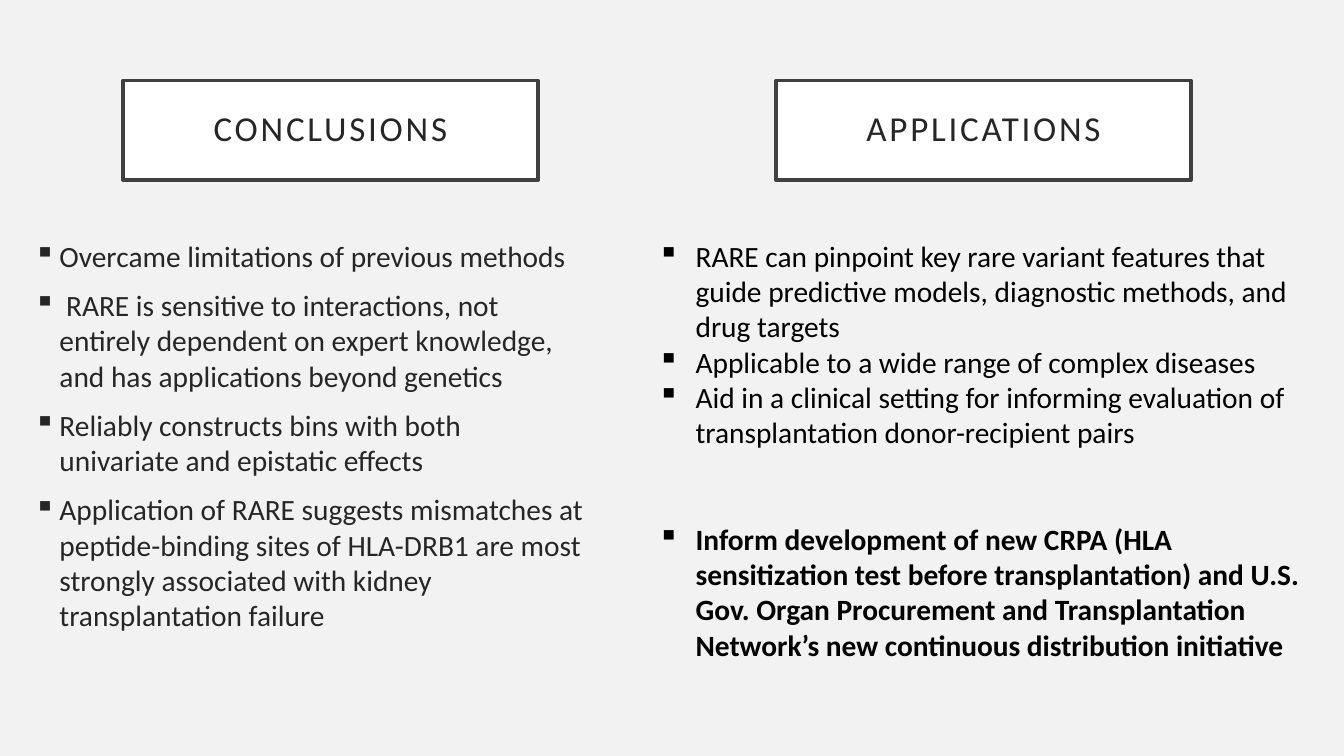
"""Builds a slide setting conclusions beside applications."""
from dataclasses import dataclass

from lxml.etree import SubElement
from pptx import Presentation
from pptx.dml.color import RGBColor as Rgb
from pptx.enum.shapes import MSO_SHAPE as Preset
from pptx.enum.text import MSO_ANCHOR as Anchor, MSO_AUTO_SIZE as AutoSize, PP_ALIGN as Align
from pptx.oxml.ns import qn
from pptx.util import Cm, Pt


@dataclass(frozen=True)
class Theme:
    background: Rgb = Rgb(0xF2, 0xF2, 0xF2)
    panel: Rgb = Rgb(0xFF, 0xFF, 0xFF)
    border: Rgb = Rgb(0x40, 0x40, 0x40)
    soft_text: Rgb = Rgb(0x26, 0x26, 0x26)
    strong_text: Rgb = Rgb(0, 0, 0)
    font: str = "Calibri"
    heading_size: Pt = Pt(25)
    body_size: Pt = Pt(21)
    border_width: Pt = Pt(2.5)
    letter_spacing: int = 200


def apply_format(target, values):
    for name, value in values.items():
        setattr(target, name, value)


class SlideBuilder:
    def __init__(self, presentation, theme):
        self.theme = theme
        self.slide = presentation.slides.add_slide(presentation.slide_layouts[5])
        fill = self.slide.background.fill
        fill.solid()
        fill.fore_color.rgb = theme.background

    def write_run(self, paragraph, text, color, size, bold=False):
        run = paragraph.add_run()
        run.text = text
        apply_format(run.font, {"name": self.theme.font, "size": size, "bold": bold})
        run.font.color.rgb = color
        return run

    def heading(self, shape, text, left):
        theme = self.theme
        apply_format(shape, {"left": left, "top": Cm(2.03), "width": Cm(10.46), "height": Cm(2.51)})
        shape.fill.solid()
        shape.fill.fore_color.rgb = theme.panel
        shape.line.color.rgb = theme.border
        shape.line.width = theme.border_width
        frame = shape.text_frame
        sides = ("left", "top", "right", "bottom")
        apply_format(frame, {f"margin_{side}": Cm(0.51) for side in sides})
        apply_format(frame, {"vertical_anchor": Anchor.MIDDLE, "word_wrap": True,
                             "auto_size": AutoSize.NONE})
        paragraph = frame.paragraphs[0]
        apply_format(paragraph, {"alignment": Align.CENTER, "line_spacing": 0.9})
        run = self.write_run(paragraph, text, theme.soft_text, theme.heading_size)
        run._r.get_or_add_rPr().set("spc", str(theme.letter_spacing))

    def title_heading(self, text, left):
        self.heading(self.slide.shapes.title, text, left)

    def box_heading(self, text, left):
        shape = self.slide.shapes.add_shape(Preset.RECTANGLE, left, 0, Cm(1), Cm(1))
        shape.shadow.inherit = False
        self.heading(shape, text, left)

    def bullets(self, items, left, width, height, indent, color):
        box = self.slide.shapes.add_textbox(left, Cm(5.87), width, height)
        frame = box.text_frame
        frame.word_wrap = True
        for index, (text, space_before, bold) in enumerate(items):
            paragraph = frame.add_paragraph() if index else frame.paragraphs[0]
            paragraph.space_before = Pt(space_before)
            properties = paragraph._p.get_or_add_pPr()
            properties.set("marL", str(indent))
            properties.set("indent", str(-indent))
            SubElement(properties, qn("a:buChar"), char="▪")
            self.write_run(paragraph, text, color, self.theme.body_size, bold)


CONCLUSIONS = [
    "Overcame limitations of previous methods",
    " RARE is sensitive to interactions, not entirely dependent on expert knowledge, "
    "and has applications beyond genetics",
    "Reliably constructs bins with both univariate and epistatic effects",
    "Application of RARE suggests mismatches at peptide-binding sites of HLA-DRB1 "
    "are most strongly associated with kidney transplantation failure",
]
APPLICATIONS = [
    ("RARE can pinpoint key rare variant features that guide predictive models, "
     "diagnostic methods, and drug targets", 0, False),
    ("Applicable to a wide range of complex diseases", 0, False),
    ("Aid in a clinical setting for informing evaluation of transplantation "
     "donor-recipient pairs", 0, False),
    ("Inform development of new CRPA (HLA sensitization test before transplantation) "
     "and U.S. Gov. Organ Procurement and Transplantation Network’s new continuous "
     "distribution initiative", 51, True),
]


def main():
    presentation = Presentation()
    apply_format(presentation, {"slide_width": Cm(33.87), "slide_height": Cm(19.05)})
    theme = Theme()
    builder = SlideBuilder(presentation, theme)
    builder.title_heading("CONCLUSIONS", Cm(3.1))
    builder.bullets([(text, 10, False) for text in CONCLUSIONS],
                    Cm(0.61), Cm(14.35), Cm(12.07), Cm(0.64), theme.soft_text)
    builder.box_heading("APPLICATIONS", Cm(19.56))
    builder.bullets(APPLICATIONS, Cm(16.33), Cm(16.92), Cm(11.94), Cm(0.95), theme.strong_text)
    presentation.save("out.pptx")


if __name__ == "__main__":
    main()
